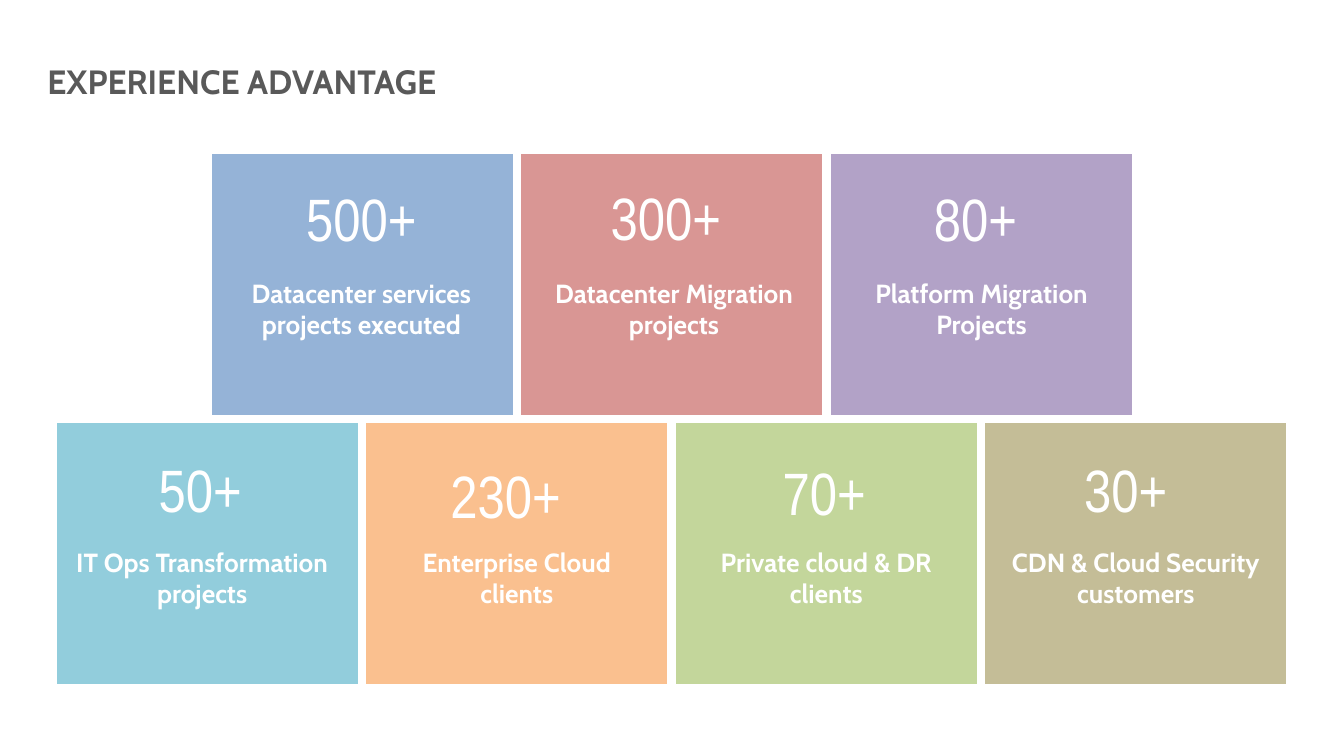
from dataclasses import dataclass

from pptx import Presentation
from pptx.dml.color import RGBColor
from pptx.enum.shapes import MSO_SHAPE
from pptx.enum.text import MSO_ANCHOR, PP_ALIGN
from pptx.util import Inches, Pt

COLORS = {
    "white": "FFFFFF", "title": "595959",
    "blue": "95B3D7", "red": "D99694", "purple": "B2A2C7",
    "aqua": "92CDDC", "orange": "FAC08F", "green": "C3D69B", "tan": "C4BD97",
}
TILE_WIDTH, TILE_HEIGHT = 3.07, 2.67
LABEL_WIDTH, LABEL_TOP = 2.77, 1.19


@dataclass
class Tile:
    """One figure; shifts run from the tile's centre, number_top from its top."""
    color: str
    number: str
    label: str
    number_shift: float
    number_top: float
    number_width: float
    label_shift: float = 0


TOP_ROW = [
    Tile("blue", "500+", "Datacenter services projects executed", -0.01, 0.24, 1.91, -0.01),
    Tile("red", "300+", "Datacenter Migration projects", -0.06, 0.23, 2.44, 0.02),
    Tile("purple", "80+", "Platform Migration Projects", -0.06, 0.24, 2.07),
]
BOTTOM_ROW = [
    Tile("aqua", "50+", "IT Ops Transformation projects", -0.07, 0.26, 1.43, -0.05),
    Tile("orange", "230+", "Enterprise Cloud clients", -0.11, 0.32, 2.18),
    Tile("green", "70+", "Private cloud & DR clients", -0.02, 0.29, 1.43),
    Tile("tan", "30+", "CDN & Cloud Security customers", -0.1, 0.26, 1.43),
]


def color(name):
    return RGBColor.from_string(COLORS[name])


def add_text(page, box, text, font_name, size, font_color="white", bold=False,
             align=PP_ALIGN.CENTER, anchor=MSO_ANCHOR.TOP, insets=(0.07,) * 4):
    frame = page.shapes.add_textbox(*map(Inches, box)).text_frame
    frame.word_wrap = True
    frame.vertical_anchor = anchor
    (frame.margin_left, frame.margin_top,
     frame.margin_right, frame.margin_bottom) = map(Inches, insets)
    paragraph = frame.paragraphs[0]
    paragraph.text = text
    paragraph.alignment = align
    font = paragraph.font
    font.name, font.size, font.bold = font_name, Pt(size), bold
    font.color.rgb = color(font_color)


def add_title(page, box):
    add_text(page, box, "EXPERIENCE ADVANTAGE", "Cabin", 24, "title", True,
             PP_ALIGN.LEFT, MSO_ANCHOR.MIDDLE, (0, 0.05, 0.1, 0.05))


def add_tile(page, left, top, tile):
    square = page.shapes.add_shape(
        MSO_SHAPE.RECTANGLE, *map(Inches, (left, top, TILE_WIDTH, TILE_HEIGHT)))
    square.shadow.inherit = False
    square.fill.solid()
    square.fill.fore_color.rgb = color(tile.color)
    square.line.color.rgb = color("white")
    square.line.width = Pt(6)

    center = left + TILE_WIDTH / 2
    number_left = center + tile.number_shift - tile.number_width / 2
    add_text(page, (number_left, top + tile.number_top, tile.number_width, 0.86),
             tile.number, "Arial Narrow", 42.7)
    label_left = center + tile.label_shift - LABEL_WIDTH / 2
    add_text(page, (label_left, top + LABEL_TOP, LABEL_WIDTH, 0.77),
             tile.label, "Cabin", 18.7, bold=True)


def add_row(page, left, top, tiles):
    for column, tile in enumerate(tiles):
        add_tile(page, left + column * TILE_WIDTH, top, tile)


def main():
    deck = Presentation()
    deck.slide_width, deck.slide_height = Inches(13.33), Inches(7.5)
    page = deck.slides.add_slide(deck.slide_layouts[6])
    add_title(page, (0.47, 0.55, 10.99, 0.5))
    add_row(page, 0.52, 1.49 + TILE_HEIGHT, BOTTOM_ROW)
    add_row(page, 2.06, 1.49, TOP_ROW)
    deck.save("out.pptx")


if __name__ == "__main__":
    main()
